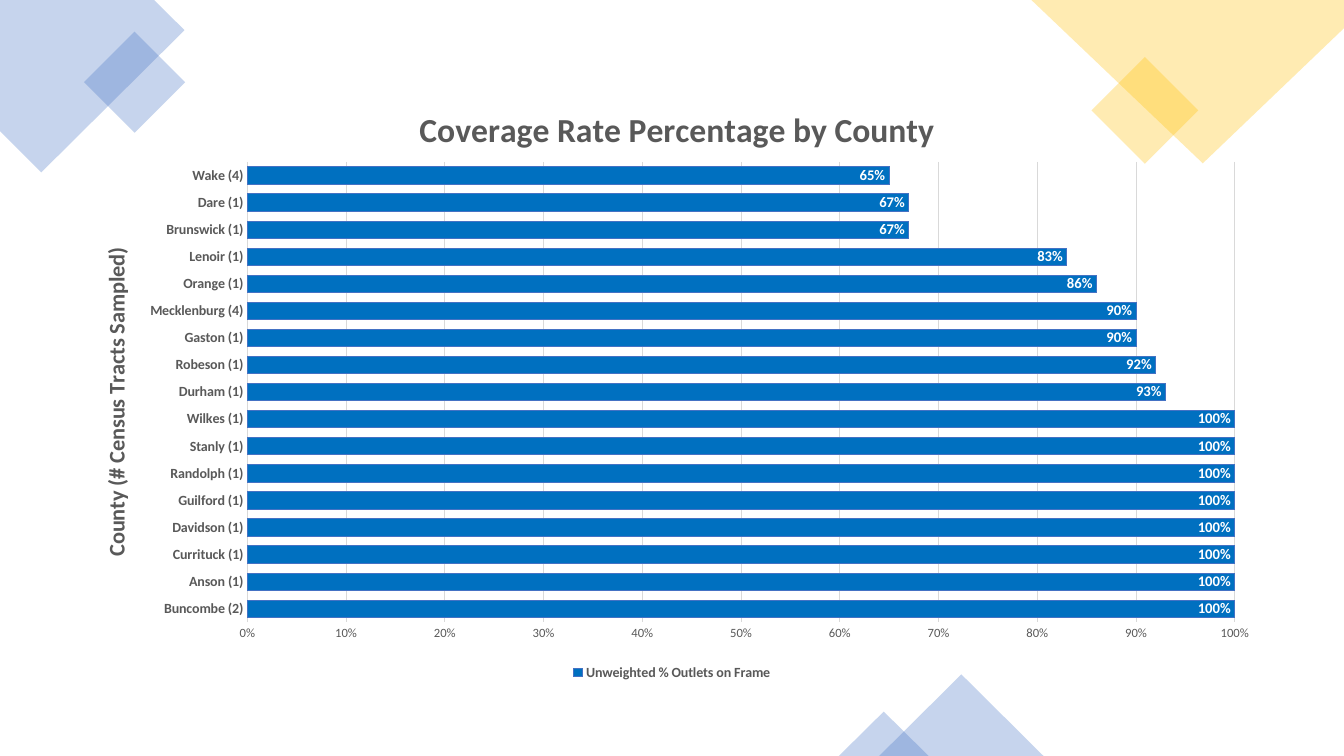
from lxml.etree import SubElement
from pptx import Presentation
from pptx.chart.data import CategoryChartData
from pptx.dml.color import RGBColor
from pptx.enum.chart import XL_CHART_TYPE, XL_LABEL_POSITION, XL_LEGEND_POSITION, XL_TICK_MARK
from pptx.enum.shapes import MSO_SHAPE
from pptx.oxml.ns import qn
from pptx.util import Inches, Pt

THEME = {
    "font": "Calibri", "blue": "4472C4", "gold": "FFC000", "bar": "0070C0",
    "text": "595959", "grid": "D9D9D9", "label": "FFFFFF",
    "title": 24, "axis_title": 16, "body": 10, "value": 10.5, "scale": 9,
}
CELL = Inches(0.01)  # grid unit: the slide is 1333 columns by 750 rows
COLUMNS, ROWS = 1333, 750


def color(name):
    return RGBColor.from_string(THEME[name])


def write(text, target, size="body", bold=True, ink="text"):
    """Format a font, or fill a text frame with one formatted span."""
    font = target
    if text:
        span = target.paragraphs[0].add_run()
        span.text = text
        font = span.font
    font.name, font.size, font.bold = THEME["font"], Pt(THEME[size]), bold
    font.color.rgb = color(ink)


deck = Presentation()
deck.slide_width, deck.slide_height = COLUMNS * CELL, ROWS * CELL
page = deck.slides.add_slide(deck.slide_layouts[6])

# Corner decorations: outlines cut off by the slide edge, tilted squares, triangles
decorations = []
for points, tint in (
    ([(153, 0), (0, 0), (0, 130), (41, 171), (183, 30)], "blue"),
    ([(COLUMNS, 0), (1023, 0), (1193, 162), (COLUMNS, 28)], "gold"),
):
    outline = page.shapes.build_freeform(*points[0], scale=CELL)
    outline.add_line_segments(points[1:], close=True)
    decorations.append((outline.convert_to_shape(), tint))

for kind, left, top, width, height, turn, tint in (
    (MSO_SHAPE.RECTANGLE, 98, 46, 71, 71, 315, "blue"),
    (MSO_SHAPE.RECTANGLE, 1098, 72, 75, 75, 315, "gold"),
    (MSO_SHAPE.ISOSCELES_TRIANGLE, 872, 669, 163, 81, 0, "blue"),
    (MSO_SHAPE.ISOSCELES_TRIANGLE, 832, 706, 89, 44, 0, "blue"),
):
    shape = page.shapes.add_shape(kind, left * CELL, top * CELL, width * CELL, height * CELL)
    shape.rotation = turn
    decorations.append((shape, tint))

for shape, tint in decorations:
    shape.shadow.inherit = False
    shape.line.fill.background()
    shape.fill.solid()
    shape.fill.fore_color.rgb = color(tint)
    ink = shape.element.spPr.find(qn("a:solidFill"))[0]
    SubElement(ink, qn("a:alpha")).set("val", "30000")

# Chart data, from the bottom bar to the top one
coverage = {
    "Buncombe (2)": 1, "Anson (1)": 1, "Currituck (1)": 1, "Davidson (1)": 1,
    "Guilford (1)": 1, "Randolph (1)": 1, "Stanly (1)": 1, "Wilkes (1)": 1,
    "Durham (1)": 0.93, "Robeson (1)": 0.92, "Gaston (1)": 0.9,
    "Mecklenburg (4)": 0.9, "Orange (1)": 0.86, "Lenoir (1)": 0.83,
    "Brunswick (1)": 0.67, "Dare (1)": 0.67, "Wake (4)": 0.65,
}
data = CategoryChartData(number_format="0%")
data.categories = list(coverage)
data.add_series("Unweighted % Outlets on Frame", list(coverage.values()))
chart = page.shapes.add_chart(
    XL_CHART_TYPE.BAR_CLUSTERED, 70 * CELL, 70 * CELL, 1193 * CELL, 609 * CELL, data
).chart
write("", chart.font, bold=False)

# Bars and their labels
plot = chart.plots[0]
plot.gap_width, plot.overlap, plot.vary_by_categories = 56, -31, False
bars = plot.series[0]
bars.format.fill.solid()
bars.format.fill.fore_color.rgb = color("bar")
bars.format.line.color.rgb = color("blue")
bars.format.line.width = 0
labels = bars.data_labels
labels.show_value = True
labels.position = XL_LABEL_POSITION.INSIDE_END
labels.number_format, labels.number_format_is_linked = "0%", False
write("", labels.font, "value", ink="label")

# Axes
counties, rates = chart.category_axis, chart.value_axis
for axis in (counties, rates):
    axis.major_tick_mark = axis.minor_tick_mark = XL_TICK_MARK.NONE
write("", counties.tick_labels.font)
write("", rates.tick_labels.font, "scale", bold=False)
rates.minimum_scale, rates.maximum_scale, rates.major_unit = 0, 1, 0.1
rates.tick_labels.number_format = "0%"
rates.tick_labels.number_format_is_linked = False
rates.format.line.fill.background()
rates.has_major_gridlines = True
for line in (counties.format.line, rates.major_gridlines.format.line):
    line.color.rgb = color("grid")
    line.width = Pt(0.75)

# Titles and legend
write("Coverage Rate Percentage by County", chart.chart_title.text_frame, "title")
write("County (# Census Tracts Sampled)", counties.axis_title.text_frame, "axis_title")
axis_title = counties.axis_title.element
axis_title.find(".//" + qn("a:bodyPr")).set("rot", "-5400000")
chart.has_legend = True
chart.legend.position = XL_LEGEND_POSITION.BOTTOM
chart.legend.include_in_layout = False
write("", chart.legend.font)

# Positions inside the chart, as shares of its size
plot_area = chart.element.find(".//" + qn("c:plotArea"))
for part, index, shares in (
    (plot_area, 0, {"x": 0.147, "y": 0.149, "w": 0.821, "h": 0.75}),
    (chart.chart_title.element, 1, {"x": 0.285, "y": 0.05}),
    (axis_title, 1, {"x": 0.022, "y": 0.282}),
):
    for old in part.findall(qn("c:layout")):
        part.remove(old)
    layout = SubElement(part, qn("c:layout"))
    part.insert(index, layout)
    manual = SubElement(layout, qn("c:manualLayout"))
    if part is plot_area:
        SubElement(manual, qn("c:layoutTarget")).set("val", "inner")
    for side in ("x", "y"):
        SubElement(manual, qn(f"c:{side}Mode")).set("val", "edge")
    for side, share in shares.items():
        SubElement(manual, qn(f"c:{side}")).set("val", str(share))

deck.save("out.pptx")
